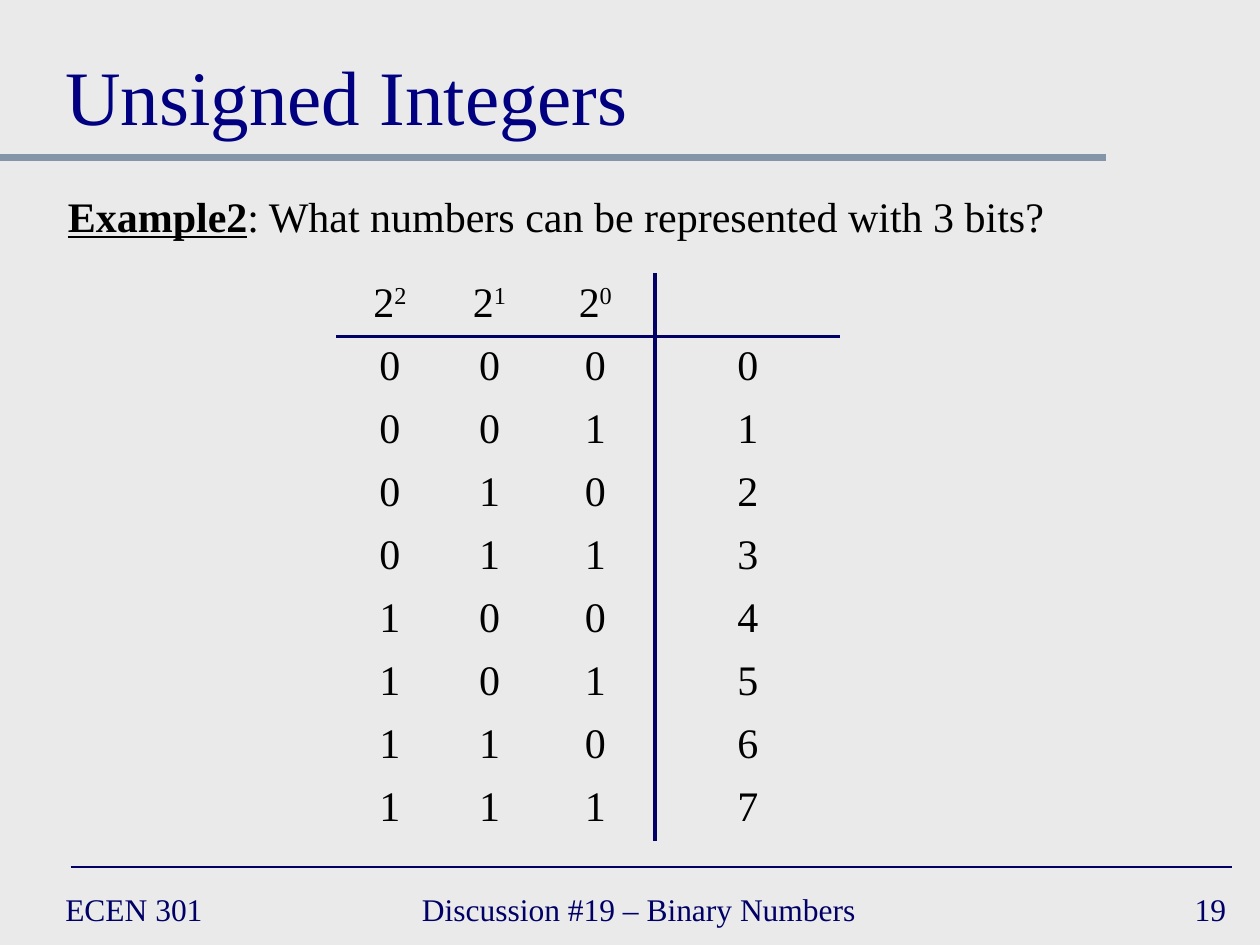
from lxml import etree
from pptx import Presentation
from pptx.dml.color import RGBColor
from pptx.enum.shapes import MSO_CONNECTOR
from pptx.enum.text import MSO_ANCHOR, PP_ALIGN
from pptx.oxml.ns import qn
from pptx.util import Inches, Pt

LEFT, MID, RIGHT = PP_ALIGN.LEFT, PP_ALIGN.CENTER, PP_ALIGN.RIGHT
TOP, CENTER, BASE = MSO_ANCHOR.TOP, MSO_ANCHOR.MIDDLE, MSO_ANCHOR.BOTTOM
LINE = MSO_CONNECTOR.STRAIGHT
FONT = "Times New Roman"
INK = {"back": "EAEAEA", "bar": "8495A9", "navy": "000066",
       "title": "000080", "text": "000000"}

BITS = 3
HEAD = [("2", str(n)) for n in reversed(range(BITS))] + [()]
BODY = [[(d,) for d in f"{n:0{BITS}b}"] + [(str(n),)] for n in range(2 ** BITS)]
COLS = (0.85, 0.73, 0.95, 1.47)
HEAD_H, BODY_H = 0.48, 3.96
RULES = [(0, 8.78, 1.25, "bar", 4), (0.56, 9.78, 6.88, "navy", 1)]
TEXTS = [
    ((0.42, 0.17, 9.17, 1), ["Unsigned Integers"], 44, "title", LEFT, BASE),
    ((0.44, 1.46, 8.97, 0.62),
     ["Example2", ": What numbers can be represented with 3 bits?"],
     24, "text", LEFT, TOP),
    ((0.42, 7, 2.17, 0.42), ["ECEN 301"], 18, "navy", LEFT, CENTER),
    ((3.25, 7, 3.83, 0.42), ["Discussion #19 – Binary Numbers"],
     18, "navy", LEFT, CENTER),
    ((7.75, 7, 2.08, 0.42), ["19"], 18, "navy", RIGHT, CENTER),
]


def color(name):
    return RGBColor.from_string(INK[name])


def write(para, parts, size, ink, align):
    para.alignment = align
    for part in parts:
        run = para.add_run()
        run.text = part
        run.font.name = FONT
        run.font.size = Pt(size)
        run.font.color.rgb = color(ink)
    return para.runs


def add_rule(slide, left, right, y, ink, width):
    rule = slide.shapes.add_connector(
        LINE, Inches(left), Inches(y), Inches(right), Inches(y))
    rule.line.color.rgb = color(ink)
    rule.line.width = Pt(width)
    etree.SubElement(rule._element.spPr, qn("a:effectLst"))


def add_text(slide, area, parts, size, ink, align, anchor):
    frame = slide.shapes.add_textbox(*map(Inches, area)).text_frame
    frame.word_wrap = True
    frame.vertical_anchor = anchor
    runs = write(frame.paragraphs[0], parts, size, ink, align)
    if len(runs) > 1:
        runs[0].font.bold = runs[0].font.underline = True


def set_edges(cell, shown):
    props = cell._tc.get_or_add_tcPr()
    for i, side in enumerate("LRTB"):
        edge = etree.Element(qn(f"a:ln{side}"), w=str(Pt(2.25)))
        if side in shown:
            fill = etree.SubElement(edge, qn("a:solidFill"))
            etree.SubElement(fill, qn("a:srgbClr"), val=INK["navy"])
        else:
            etree.SubElement(edge, qn("a:noFill"))
        props.insert(i, edge)


def add_grid(slide):
    rows = [HEAD] + BODY
    table = slide.shapes.add_table(
        len(rows), len(COLS), Inches(2.67), Inches(2.17),
        Inches(sum(COLS)), Inches(HEAD_H + BODY_H)).table
    table.first_row = table.horz_banding = False
    for col, width in zip(table.columns, COLS):
        col.width = Inches(width)
    for r, row in enumerate(rows):
        table.rows[r].height = Inches(BODY_H / len(BODY) if r else HEAD_H)
        for c, parts in enumerate(row):
            cell = table.cell(r, c)
            cell.fill.background()
            set_edges(cell, {0: "B", 1: "T"}.get(r, "")
                      + {BITS - 1: "R", BITS: "L"}.get(c, ""))
            runs = write(cell.text_frame.paragraphs[0], parts, 24, "text", MID)
            for power in runs[1:]:
                power.font._element.set("baseline", "30000")


def main():
    deck = Presentation()
    deck.slide_width, deck.slide_height = Inches(10), Inches(7.5)
    slide = deck.slides.add_slide(deck.slide_layouts[6])
    slide.background.fill.solid()
    slide.background.fill.fore_color.rgb = color("back")
    for rule in RULES:
        add_rule(slide, *rule)
    for text in TEXTS:
        add_text(slide, *text)
    add_grid(slide)
    deck.save("out.pptx")


if __name__ == "__main__":
    main()
